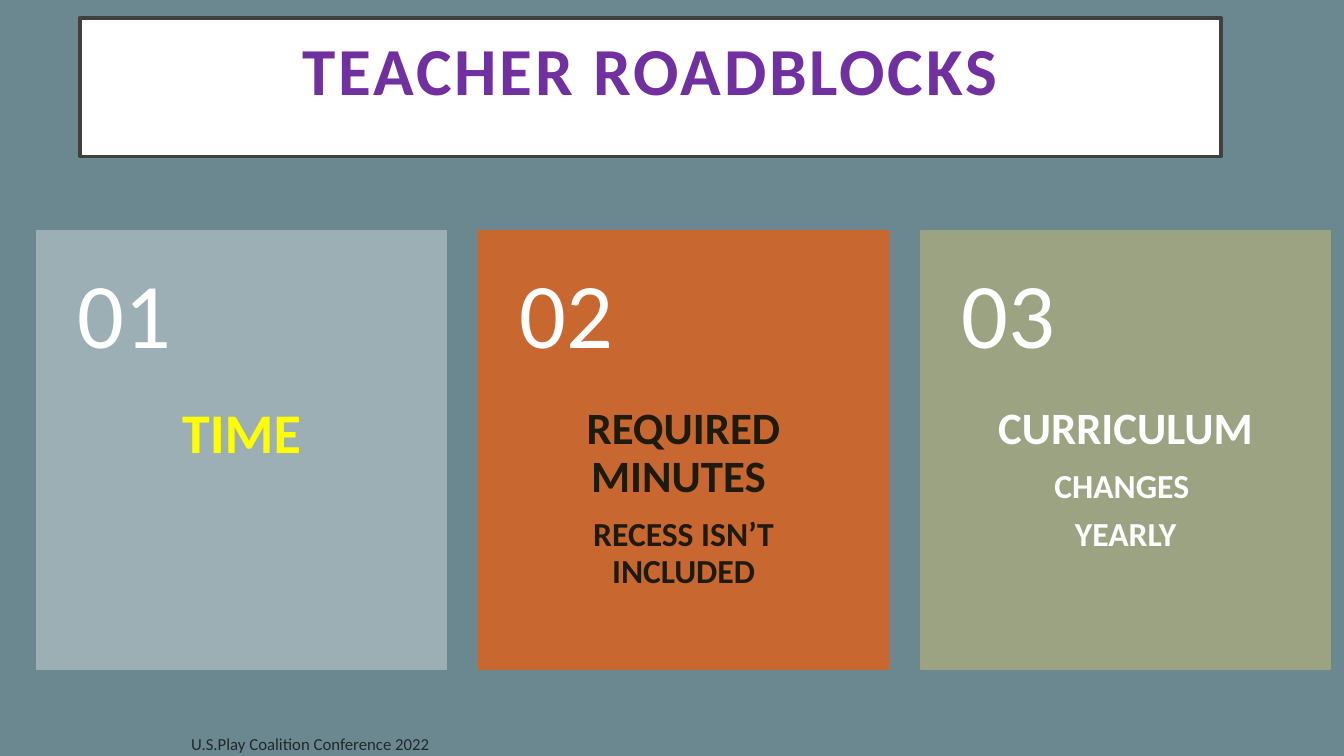
import pptx
import pptx.dml.color
import pptx.enum.dml
import pptx.enum.shapes
import pptx.enum.text
import pptx.oxml.ns
import pptx.util
from lxml import etree

RGBColor = pptx.dml.color.RGBColor
ALIGN = pptx.enum.text.PP_ALIGN
ANCHOR = pptx.enum.text.MSO_ANCHOR

TEAL = RGBColor(0x6B, 0x88, 0x91)
WHITE = RGBColor(0xFF, 0xFF, 0xFF)
CHARCOAL = RGBColor(0x40, 0x40, 0x40)
PURPLE = RGBColor(0x70, 0x30, 0xA0)
MIST = RGBColor(0x9B, 0xAF, 0xB5)
ORANGE = RGBColor(0xC9, 0x67, 0x31)
OLIVE = RGBColor(0x9C, 0xA3, 0x83)
YELLOW = RGBColor(0xFF, 0xFF, 0x00)
DARK = RGBColor(0x1E, 0x1B, 0x0E)
BLACK = RGBColor(0x00, 0x00, 0x00)

EMU_PER_PX = 9525


def px(*lengths):
    return [pptx.util.Emu(length * EMU_PER_PX) for length in lengths]


def write(shape, lines, color, bold=False, align=ALIGN.LEFT, anchor=ANCHOR.TOP,
          insets=(10, 5, 10, 5), line_spacing=0.9, space_after=0,
          tracking=None, opacity=None):
    """Fill a shape with (text, point size) lines; space_after is a share of the size."""
    frame = shape.text_frame
    frame.word_wrap = True
    frame.auto_size = pptx.enum.text.MSO_AUTO_SIZE.NONE
    frame.vertical_anchor = anchor
    (frame.margin_left, frame.margin_top,
     frame.margin_right, frame.margin_bottom) = px(*insets)
    for index, (text, size) in enumerate(lines):
        para = frame.add_paragraph() if index else frame.paragraphs[0]
        para.alignment = align
        para.line_spacing = line_spacing
        para.space_before = pptx.util.Pt(0)
        para.space_after = pptx.util.Pt(size * space_after)
        span = para.add_run()
        span.text = text
        span.font.name = "Calibri"
        span.font.size = pptx.util.Pt(size)
        span.font.bold = bold
        span.font.color.rgb = color
        if tracking:
            span.font._element.set("spc", str(tracking * 100))
        if opacity:
            tint = span.font._element.find(".//" + pptx.oxml.ns.qn("a:srgbClr"))
            alpha = etree.SubElement(tint, pptx.oxml.ns.qn("a:alpha"))
            alpha.set("val", str(opacity * 1000))


deck = pptx.Presentation()
deck.slide_width, deck.slide_height = px(1280, 720)
slide = deck.slides.add_slide(deck.slide_layouts.get_by_name("Title Only"))
slide.background.fill.solid()
slide.background.fill.fore_color.rgb = TEAL

title = slide.shapes.title
title.left, title.top, title.width, title.height = px(76, 17, 1087, 132)
title.fill.solid()
title.fill.fore_color.rgb = WHITE
title.line.color.rgb = CHARCOAL
title.line.width = pptx.util.Pt(2.5)
write(title, [("TEACHER ROADBLOCKS", 48)], PURPLE, bold=True, align=ALIGN.CENTER,
      insets=(19, 19, 19, 19), tracking=2)

CARD_LEFT, CARD_TOP, CARD_WIDTH, CARD_HEIGHT = 35, 220, 390, 417
CARD_STEP = 421
NUMBER_HEIGHT = 167

roadblocks = [
    (MIST, YELLOW, [("TIME", 40)]),
    (ORANGE, DARK, [("REQUIRED MINUTES ", 32), ("RECESS ISN’T INCLUDED", 24)]),
    (OLIVE, WHITE, [("CURRICULUM", 32), ("CHANGES ", 24), ("YEARLY", 24)]),
]
for index, (card_color, text_color, lines) in enumerate(roadblocks):
    left = CARD_LEFT + index * CARD_STEP
    card = slide.shapes.add_shape(
        pptx.enum.shapes.MSO_SHAPE.RECTANGLE,
        *px(left, CARD_TOP, CARD_WIDTH, CARD_HEIGHT))
    card.shadow.inherit = False
    card.fill.solid()
    card.fill.fore_color.rgb = card_color
    card.line.color.rgb = card_color
    card.line.width = pptx.util.Pt(1)

    body_box = slide.shapes.add_textbox(
        *px(left, CARD_TOP + NUMBER_HEIGHT - 1, CARD_WIDTH, CARD_HEIGHT - NUMBER_HEIGHT + 1))
    write(body_box, lines, text_color, bold=True, align=ALIGN.CENTER,
          insets=(39, 0, 39, 35), space_after=0.35)

    number_box = slide.shapes.add_textbox(*px(left, CARD_TOP, CARD_WIDTH, NUMBER_HEIGHT))
    write(number_box, [(f"{index + 1:02}", 66)], WHITE, anchor=ANCHOR.MIDDLE,
          insets=(39, 17, 39, 17), space_after=0.35)

footer_box = slide.shapes.add_textbox(*px(172, 696, 960, 24))
write(footer_box, [("U.S.Play Coalition Conference 2022", 12)], BLACK,
      anchor=ANCHOR.MIDDLE, line_spacing=1.0, opacity=70)

deck.save("out.pptx")
